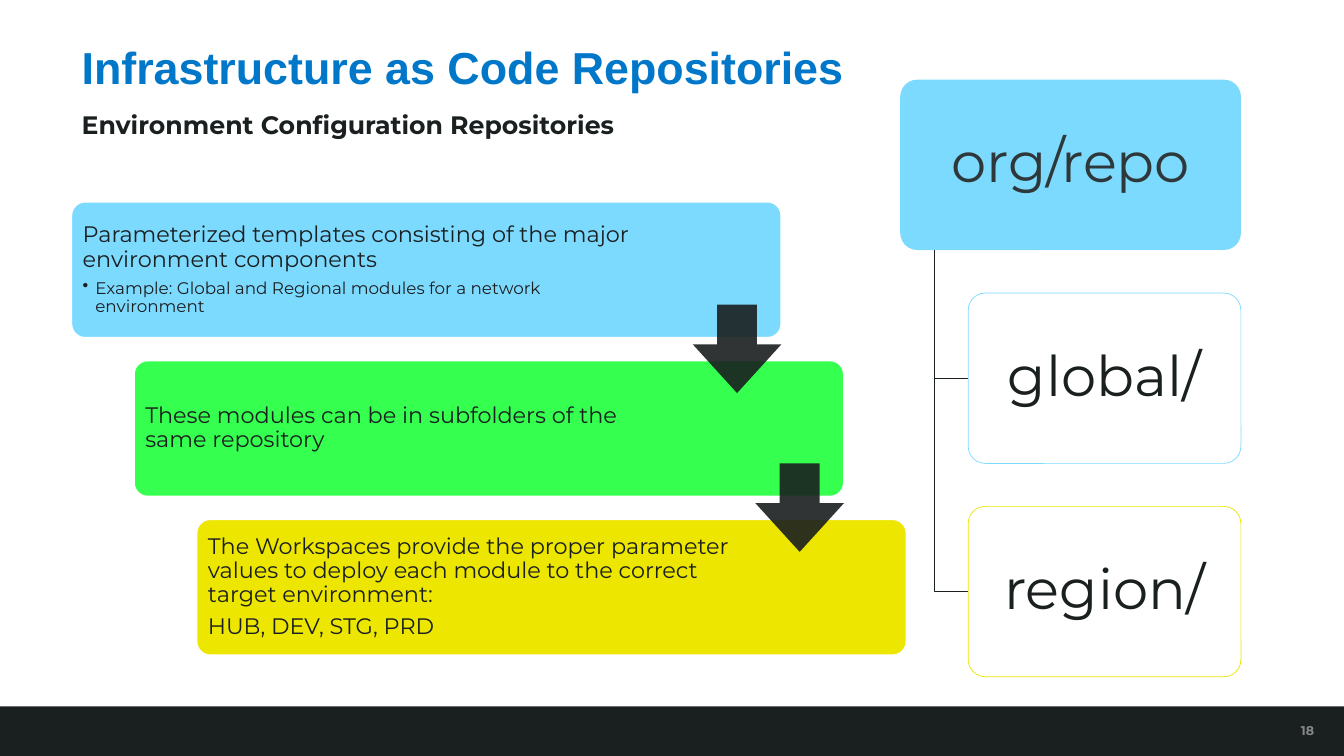
"""Build the slide on environment configuration repositories."""
from dataclasses import dataclass

from lxml.etree import SubElement
from pptx import Presentation
from pptx.dml.color import RGBColor
from pptx.enum.shapes import MSO_SHAPE as Shape
from pptx.enum.text import MSO_ANCHOR as Anchor, MSO_AUTO_SIZE as AutoSize, PP_ALIGN as Align
from pptx.oxml.ns import qn
from pptx.util import Pt


@dataclass(frozen=True)
class Theme:
    ink: str = "1A1F20"
    slate: str = "2E3739"
    blue: str = "0077C8"
    sky: str = "7DDAFF"
    green: str = "35FF4F"
    yellow: str = "EDE600"
    white: str = "FFFFFF"
    grey: str = "878888"
    heading_font: str = "Arial"
    body_font: str = "Montserrat"
    title: int = 32
    subtitle: int = 18
    folder: int = 40
    card: int = 16
    example: int = 12
    number: int = 9


theme = Theme()


def write(paragraph, text, *, size, color=theme.ink, font=theme.body_font, bold=False,
          align=Align.LEFT, spacing=0.9, after=0, bullet=None):
    """Fill one paragraph with formatted text."""
    properties = paragraph._p.get_or_add_pPr()
    indent = Pt(9) if bullet else 0
    properties.set("marL", str(indent))
    properties.set("indent", str(-indent))
    paragraph.alignment = align
    paragraph.line_spacing = spacing
    paragraph.space_before = Pt(0)
    paragraph.space_after = Pt(after)
    if bullet:
        SubElement(properties, qn("a:buChar")).set("char", bullet)
    else:
        SubElement(properties, qn("a:buNone"))
    run = paragraph.add_run()
    run.text = text
    run.font.name = font
    run.font.size = Pt(size)
    run.font.bold = bold
    run.font.color.rgb = RGBColor.from_string(color)


def add_block(kind, left, top, width, height, *, fill, line=None, weight=1, opacity=100, adjust=()):
    """Add a preset shape with its fill, outline and proportions."""
    shape = slide.shapes.add_shape(kind, Pt(left), Pt(top), Pt(width), Pt(height))
    shape.shadow.inherit = False
    shape.fill.solid()
    shape.fill.fore_color.rgb = RGBColor.from_string(fill)
    if opacity < 100:
        color = shape.element.xpath("./p:spPr/a:solidFill/a:srgbClr")[0]
        SubElement(color, qn("a:alpha")).set("val", str(opacity * 1000))
    if line:
        shape.line.color.rgb = RGBColor.from_string(line)
        shape.line.width = Pt(weight)
    else:
        shape.line.fill.background()
    for index, value in enumerate(adjust):
        shape.adjustments[index] = value
    frame = shape.text_frame
    frame.word_wrap = True
    frame.vertical_anchor = Anchor.MIDDLE
    frame.margin_left = frame.margin_right = frame.margin_top = frame.margin_bottom = Pt(5.2)
    return shape


presentation = Presentation()
presentation.slide_width, presentation.slide_height = Pt(960), Pt(540)
slide = presentation.slides.add_slide(presentation.slide_layouts[1])

add_block(Shape.RECTANGLE, 0, 504.5, 960, 35.5, fill=theme.ink)

title, subtitle = slide.placeholders
for placeholder, top, height, anchor in ((title, 27.4, 44.6, Anchor.MIDDLE),
                                         (subtitle, 72, 31, Anchor.TOP)):
    placeholder.left, placeholder.top = Pt(51.1), Pt(top)
    placeholder.width, placeholder.height = Pt(597), Pt(height)
    placeholder.text_frame.auto_size = AutoSize.NONE
    placeholder.text_frame.vertical_anchor = anchor
write(title.text_frame.paragraphs[0], "Infrastructure as Code Repositories",
      size=theme.title, color=theme.blue, font=theme.heading_font, bold=True)
write(subtitle.text_frame.paragraphs[0], "Environment Configuration Repositories",
      size=theme.subtitle, bold=True, spacing=1.1)

number = slide.shapes.add_textbox(Pt(916.6), Pt(509), Pt(34.6), Pt(26))
number.text_frame.word_wrap = True
number.text_frame.vertical_anchor = Anchor.MIDDLE
write(number.text_frame.paragraphs[0], "18", size=theme.number, color=theme.grey,
      bold=True, align=Align.CENTER, spacing=1.0)

folder_height, folder_step = 121.7, 152.4
root_top, trunk_left, child_left, tree_right = 56.9, 667.3, 691.6, 886.4
folders = (
    ("org/repo", 643, theme.sky, None, 100, theme.slate),
    ("global/", child_left, theme.white, theme.sky, 90, theme.ink),
    ("region/", child_left, theme.white, theme.yellow, 90, theme.ink),
)
for row, (name, left, fill, line, opacity, color) in enumerate(folders):
    top = root_top + row * folder_step
    if row:
        middle = top + folder_height / 2
        builder = slide.shapes.build_freeform(Pt(trunk_left), Pt(root_top + folder_height))
        builder.add_line_segments([(Pt(trunk_left), Pt(middle)), (Pt(child_left), Pt(middle))],
                                  close=False)
        branch = builder.convert_to_shape()
        branch.shadow.inherit = False
        branch.fill.background()
        branch.line.color.rgb = RGBColor.from_string(theme.ink)
        branch.line.width = Pt(1)
    folder = add_block(Shape.ROUNDED_RECTANGLE, left, top, tree_right - left, folder_height,
                       fill=fill, line=line, weight=0.5, opacity=opacity, adjust=[0.1])
    write(folder.text_frame.paragraphs[0], name, size=theme.folder, color=color,
          align=Align.CENTER, after=14)

step_x, step_y = 44.7, 113.4
main = dict(size=theme.card, after=5.6)
example = dict(size=theme.example, after=1.8, bullet="•")
cards = (
    (theme.sky, 104, (
        ("Parameterized templates consisting of the major environment components", main),
        ("Example: Global and Regional modules for a network environment", example))),
    (theme.green, 112.4, (
        ("These modules can be in subfolders of the same repository", main),)),
    (theme.yellow, 112.4, (
        ("The Workspaces provide the proper parameter values to deploy each module "
         "to the correct target environment:", main),
        ("HUB, DEV, STG, PRD", main))),
)
for row, (fill, right_margin, lines) in enumerate(cards):
    card = add_block(Shape.ROUNDED_RECTANGLE, 51.1 + row * step_x, 144.2 + row * step_y, 506.9, 97,
                     fill=fill, line=theme.white, adjust=[0.1])
    frame = card.text_frame
    frame.margin_right = Pt(right_margin)
    for index, (text, style) in enumerate(lines):
        paragraph = frame.add_paragraph() if index else frame.paragraphs[0]
        write(paragraph, text, **style)

for row in range(len(cards) - 1):
    add_block(Shape.DOWN_ARROW, 494.9 + row * step_x, 217.6 + row * step_y, 63.2, 63.2,
              fill=theme.ink, opacity=90, adjust=[0.45, 0.55])

presentation.save("out.pptx")
